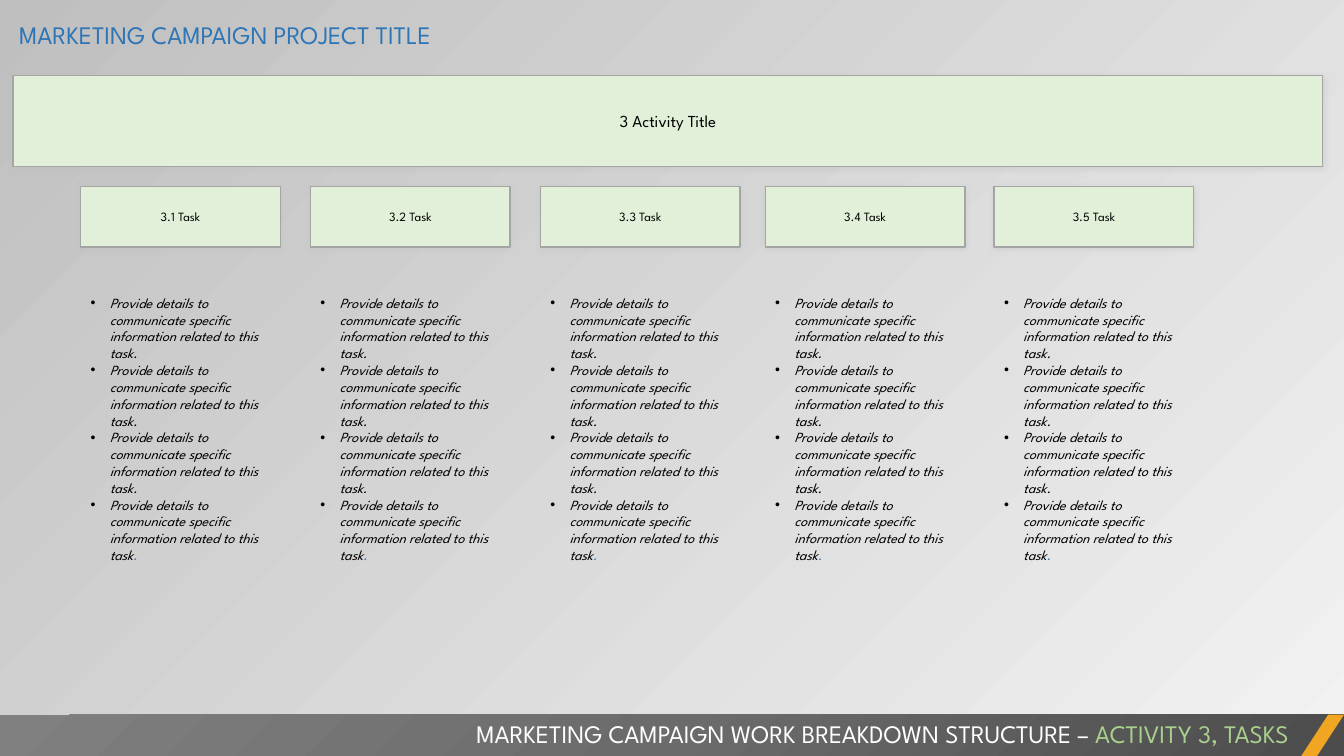
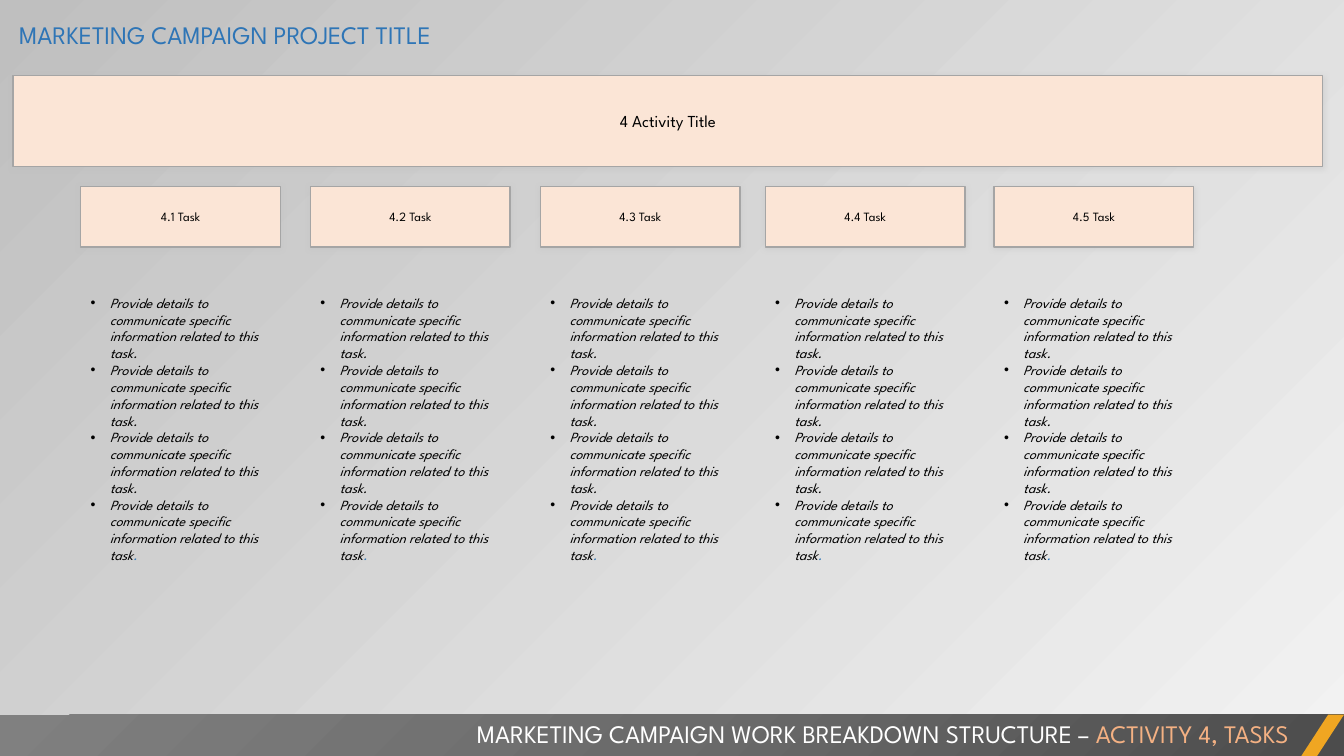
from dataclasses import dataclass

from lxml.etree import SubElement
from pptx import Presentation
from pptx.dml.color import RGBColor
from pptx.enum.shapes import MSO_SHAPE as Preset
from pptx.enum.text import MSO_ANCHOR as Anchor, MSO_AUTO_SIZE as AutoSize, PP_ALIGN as Align
from pptx.oxml.ns import qn
from pptx.shapes.autoshape import Shape
from pptx.slide import Slide
from pptx.text.text import TextFrame, _Paragraph as Paragraph
from pptx.util import Inches, Pt

FONT = "League Spartan"
BLACK = RGBColor(0x00, 0x00, 0x00)
WHITE = RGBColor(0xFF, 0xFF, 0xFF)
BLUE = RGBColor(0x2E, 0x75, 0xB6)
AMBER = RGBColor(0xF0, 0xA6, 0x22)
OUTLINE = RGBColor(0xA5, 0xA5, 0xA5)
SILVER = RGBColor(0xBF, 0xBF, 0xBF)
PALE_GRAY = RGBColor(0xF2, 0xF2, 0xF2)
BAND_GRAYS = (RGBColor(0x4C, 0x4C, 0x4C), RGBColor(0x6B, 0x6B, 0x6B), RGBColor(0x80, 0x80, 0x80))
PALE_GREEN = RGBColor(0xE2, 0xF0, 0xD9)
GREEN = RGBColor(0xA9, 0xD1, 0x8E)
PALE_ORANGE = RGBColor(0xFB, 0xE5, 0xD6)
ORANGE = RGBColor(0xF4, 0xB1, 0x83)

PROJECT_TITLE = "MARKETING CAMPAIGN PROJECT TITLE"
FOOTER_LEAD = "MARKETING CAMPAIGN WORK BREAKDOWN STRUCTURE – "
DETAIL = "Provide details to communicate specific information related to this task"
DETAILS_PER_TASK = 4
TASK_LEFTS = (0.8, 3.08, 5.36, 7.59, 9.86)
TASK_WIDTH = 1.98


@dataclass(frozen=True)
class Box:
    left: float
    top: float
    width: float
    height: float

    def lengths(self) -> tuple[int, int, int, int]:
        return Inches(self.left), Inches(self.top), Inches(self.width), Inches(self.height)


@dataclass(frozen=True)
class Activity:
    number: int
    pale: RGBColor
    accent: RGBColor


ACTIVITIES = (Activity(3, PALE_GREEN, GREEN), Activity(4, PALE_ORANGE, ORANGE))


def add_color(parent, color: RGBColor, alpha: int = 100) -> None:
    srgb = SubElement(parent, qn("a:srgbClr"), val=str(color))
    if alpha < 100:
        SubElement(srgb, qn("a:alpha"), val=str(alpha * 1000))


def set_gradient_stops(gradient, stops: list[tuple[int, RGBColor, int]]) -> None:
    """Replace the content of a gradFill with stops of (position, colour, opacity)."""
    for child in list(gradient):
        gradient.remove(child)
    stop_list = SubElement(gradient, qn("a:gsLst"))
    for position, color, alpha in stops:
        add_color(SubElement(stop_list, qn("a:gs"), pos=str(position * 1000)), color, alpha)


def paint_background(prs: Presentation) -> None:
    master = prs.slide_master
    master.background.fill.gradient()
    gradient = master.element.find(f".//{qn('p:bgPr')}/{qn('a:gradFill')}")
    set_gradient_stops(gradient, [(0, PALE_GRAY, 40), (100, SILVER, 100)])
    SubElement(gradient, qn("a:lin"), ang=str(225 * 60000), scaled="0")


def style_runs(paragraph: Paragraph, size: float, *colors: RGBColor, italic: bool = False) -> None:
    for run, color in zip(paragraph.runs, colors):
        run.font.name = FONT
        run.font.size = Pt(size)
        run.font.italic = italic
        run.font.color.rgb = color


def add_plain_shape(slide: Slide, preset: Preset, box: Box, fill: RGBColor) -> Shape:
    shape = slide.shapes.add_shape(preset, *box.lengths())
    shape.shadow.inherit = False
    shape.fill.solid()
    shape.fill.fore_color.rgb = fill
    shape.line.fill.background()
    return shape


def add_card(slide: Slide, box: Box, label: str, size: float, fill: RGBColor) -> None:
    card = add_plain_shape(slide, Preset.RECTANGLE, box, fill)
    card.line.color.rgb = OUTLINE
    card.line.width = Pt(1)
    effects = card.element.spPr.find(qn("a:effectLst"))
    shadow = SubElement(effects, qn("a:outerShdw"), blurRad=str(Pt(4)), dist=str(Pt(1)),
                        dir=str(90 * 60000), algn="t", rotWithShape="0")
    add_color(shadow, SILVER, 40)
    frame = card.text_frame
    frame.text = label
    frame.vertical_anchor = Anchor.MIDDLE
    frame.paragraphs[0].alignment = Align.CENTER
    style_runs(frame.paragraphs[0], size, BLACK)


def add_text_box(slide: Slide, box: Box) -> TextFrame:
    frame = slide.shapes.add_textbox(*box.lengths()).text_frame
    frame.word_wrap = True
    return frame


def add_bullet(paragraph: Paragraph) -> None:
    properties = paragraph._p.get_or_add_pPr()
    properties.set("marL", str(Inches(0.19)))
    properties.set("indent", str(Inches(-0.19)))
    SubElement(properties, qn("a:buFont"), typeface="Arial")
    SubElement(properties, qn("a:buChar"), char="•")


def add_details(slide: Slide, box: Box) -> None:
    frame = add_text_box(slide, box)
    frame.text = "\n".join([DETAIL + "."] * (DETAILS_PER_TASK - 1) + [DETAIL])
    last = frame.paragraphs[-1]
    last.add_run().text = "."
    for paragraph in frame.paragraphs:
        add_bullet(paragraph)
        style_runs(paragraph, 10, BLACK, BLUE, italic=True)


def set_title(slide: Slide) -> None:
    title = slide.shapes.title
    title.left, title.top, title.width, title.height = Box(0.09, 0.14, 10.11, 0.4).lengths()
    frame = title.text_frame
    frame.text = PROJECT_TITLE
    frame.auto_size = AutoSize.NONE
    frame.vertical_anchor = Anchor.TOP
    frame.paragraphs[0].alignment = Align.LEFT
    style_runs(frame.paragraphs[0], 18, BLUE)


def add_footer(slide: Slide, activity: Activity) -> None:
    # Gray band, darkest at its lower right corner
    band = add_plain_shape(slide, Preset.RECTANGLE, Box(0, 7.09, 13.33, 0.42), BAND_GRAYS[0])
    band.fill.gradient()
    gradient = band.element.spPr.find(qn("a:gradFill"))
    set_gradient_stops(gradient, [(50 * i, gray, 100) for i, gray in enumerate(BAND_GRAYS)])
    circle = SubElement(gradient, qn("a:path"), path="circle")
    SubElement(circle, qn("a:fillToRect"), l="100000", t="100000")

    # Amber slash
    slash = add_plain_shape(slide, Preset.PARALLELOGRAM, Box(12.9, 7.09, 0.43, 0.42), AMBER)
    slash.adjustments[0] = 0.65

    # Slide subject
    frame = add_text_box(slide, Box(2.77, 7.08, 10.11, 0.4))
    subject = frame.paragraphs[0]
    subject.text = FOOTER_LEAD
    subject.add_run().text = f"ACTIVITY {activity.number}, TASKS"
    subject.alignment = Align.RIGHT
    style_runs(subject, 18, WHITE, activity.accent)


def add_activity_slide(prs: Presentation, activity: Activity) -> None:
    slide = prs.slides.add_slide(prs.slide_layouts[5])
    set_title(slide)
    add_card(slide, Box(0.13, 0.75, 12.99, 0.9), f"{activity.number} Activity Title", 12,
             activity.pale)
    add_footer(slide, activity)
    # Task columns
    for number, left in enumerate(TASK_LEFTS, start=1):
        add_card(slide, Box(left, 1.85, TASK_WIDTH, 0.6), f"{activity.number}.{number} Task", 9,
                 activity.pale)
        add_details(slide, Box(left, 2.87, TASK_WIDTH, 3))


def main() -> None:
    prs = Presentation()
    prs.slide_width, prs.slide_height = Inches(13.33), Inches(7.5)
    paint_background(prs)
    for activity in ACTIVITIES:
        add_activity_slide(prs, activity)
    prs.save("out.pptx")


if __name__ == "__main__":
    main()
